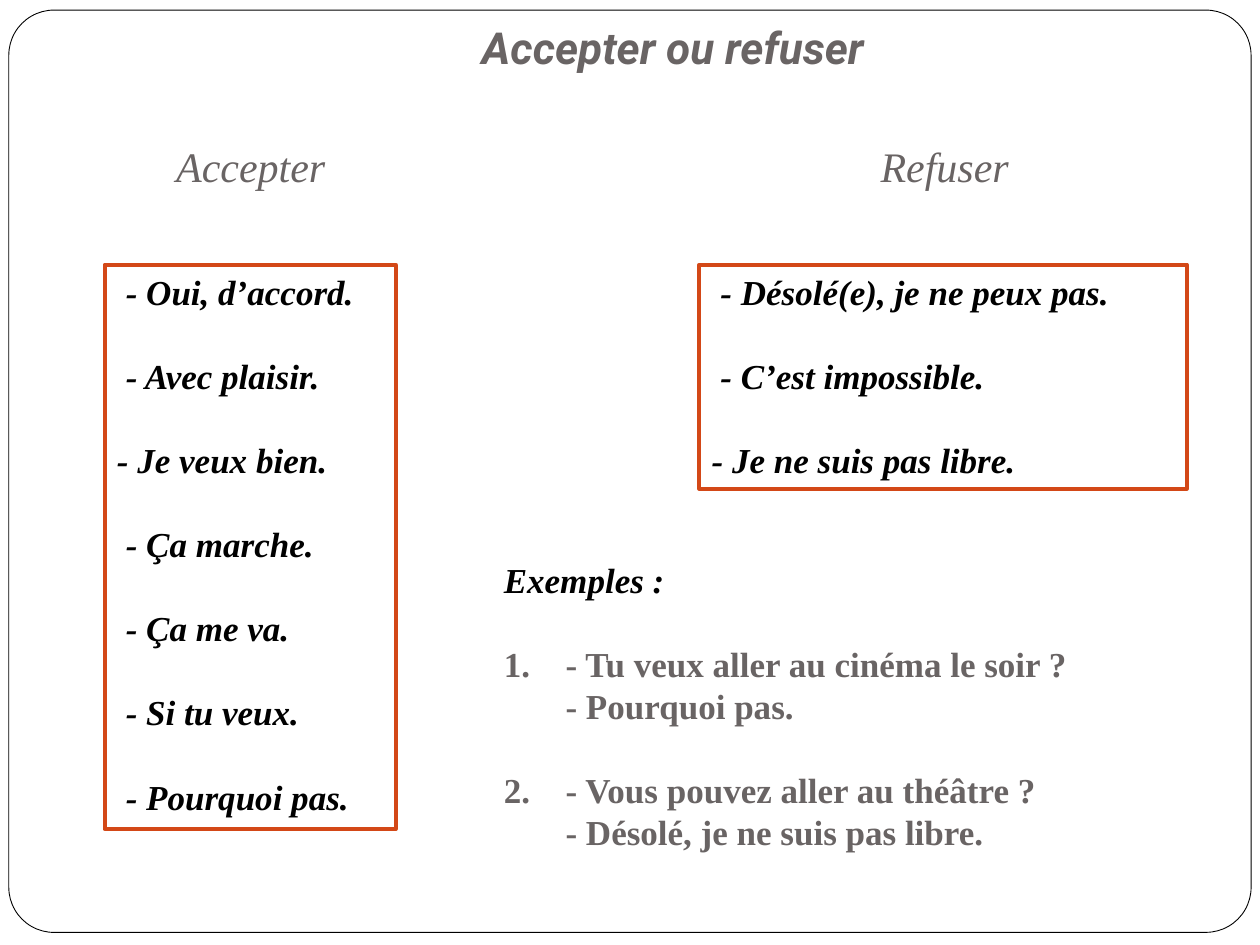
from pptx import Presentation
from pptx.dml.color import RGBColor
from pptx.enum.shapes import MSO_SHAPE
from pptx.enum.text import MSO_ANCHOR, PP_ALIGN
from pptx.util import Inches, Pt
from lxml import etree

ROUNDED = MSO_SHAPE.ROUNDED_RECTANGLE
BOTTOM = MSO_ANCHOR.BOTTOM
CENTER = PP_ALIGN.CENTER
BLACK = RGBColor(0x00, 0x00, 0x00)
WHITE = RGBColor(0xFF, 0xFF, 0xFF)
GRAY = RGBColor(0x69, 0x64, 0x64)
ORANGE = RGBColor(0xD3, 0x48, 0x17)
SERIF = "Times New Roman"
LINE = Pt(24)
NS = "http://schemas.openxmlformats.org/drawingml/2006/main"

prs = Presentation()
prs.slide_width, prs.slide_height = Inches(10), Inches(7.5)
s = prs.slides.add_slide(prs.slide_layouts[6])


def add_box(left, top, width, height):
    box = s.shapes.add_textbox(Inches(left), Inches(top), Inches(width), Inches(height))
    box.text_frame.word_wrap = True
    return box


def add_line(tf, text, size, color, bold=True, italic=True, font=SERIF):
    p = tf.paragraphs[0] if not tf.text else tf.add_paragraph()
    r = p.add_run()
    r.text = text
    r.font.name, r.font.size = font, Pt(size)
    r.font.bold, r.font.italic = bold, italic
    r.font.color.rgb = color
    return p


# Slide frame
frame = s.shapes.add_shape(ROUNDED, Inches(0.07), Inches(0.08), Inches(9.86), Inches(7.32))
frame.adjustments[0] = 0.049
frame.shadow.inherit = False
frame.fill.solid()
frame.fill.fore_color.rgb = WHITE
frame.line.color.rgb = BLACK
frame.line.width = Pt(0.5)

# Title
tf = add_box(1.14, 0.29, 8.4, 0.39).text_frame
tf.vertical_anchor = BOTTOM
tf.margin_bottom = Inches(0.1)
add_line(tf, "Accepter ou refuser", 25.2, GRAY, font="Roboto").alignment = CENTER

# Column headings
for text, left, width in [("Accepter", 1.3, 1.62), ("Refuser", 6.89, 1.45)]:
    add_line(add_box(left, 1.07, width, 0.5).text_frame, text, 24, GRAY, bold=False)

# Framed phrase lists: the third phrase of each stands slightly further left
phrase_lists = [
    (0.83, 2.31, 4.48, ["Oui, d’accord.", "Avec plaisir.", "Je veux bien.", "Ça marche.",
                        "Ça me va.", "Si tu veux.", "Pourquoi pas."]),
    (5.55, 3.87, 1.78, ["Désolé(e), je ne peux pas.", "C’est impossible.",
                        "Je ne suis pas libre."]),
]
for left, width, height, phrases in phrase_lists:
    box = add_box(left, 2.1, width, height)
    box.line.color.rgb = ORANGE
    box.line.width = Pt(2.25)
    for i, phrase in enumerate(phrases):
        p = add_line(box.text_frame, "- " + phrase, 20, BLACK)
        p.line_spacing = LINE
        p.space_before = LINE if i else Pt(0)
        if i != 2:
            p._p.get_or_add_pPr().set("marL", str(Inches(0.07)))

# Numbered example dialogues
tf = add_box(3.9, 4.38, 5.25, 2.46).text_frame
add_line(tf, "Exemples :", 20, BLACK).line_spacing = LINE
dialogues = [
    ("- Tu veux aller au cinéma le soir ?", "- Pourquoi pas."),
    ("- Vous pouvez aller au théâtre ?", "- Désolé, je ne suis pas libre."),
]
for number, (question, answer) in enumerate(dialogues, 1):
    p = add_line(tf, question, 20, GRAY, italic=False)
    p.line_spacing = p.space_before = LINE
    pPr = p._p.get_or_add_pPr()
    pPr.set("marL", str(Inches(0.49)))
    pPr.set("indent", str(Inches(-0.49)))
    bullet = etree.SubElement(pPr, f"{{{NS}}}buAutoNum", type="arabicPeriod")
    bullet.set("startAt", str(number))

    p = add_line(tf, answer, 20, GRAY, italic=False)
    p.line_spacing = LINE
    p._p.get_or_add_pPr().set("marL", str(Inches(0.49)))

prs.save("out.pptx")
